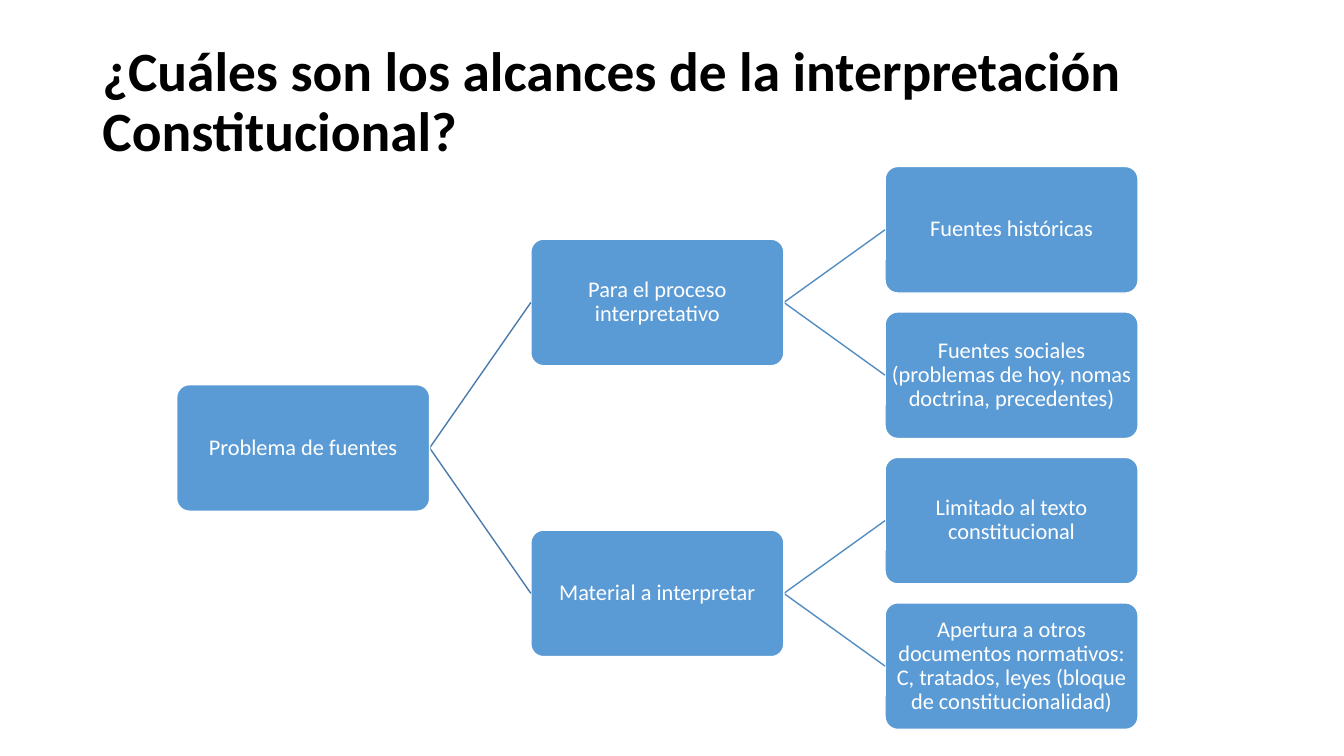
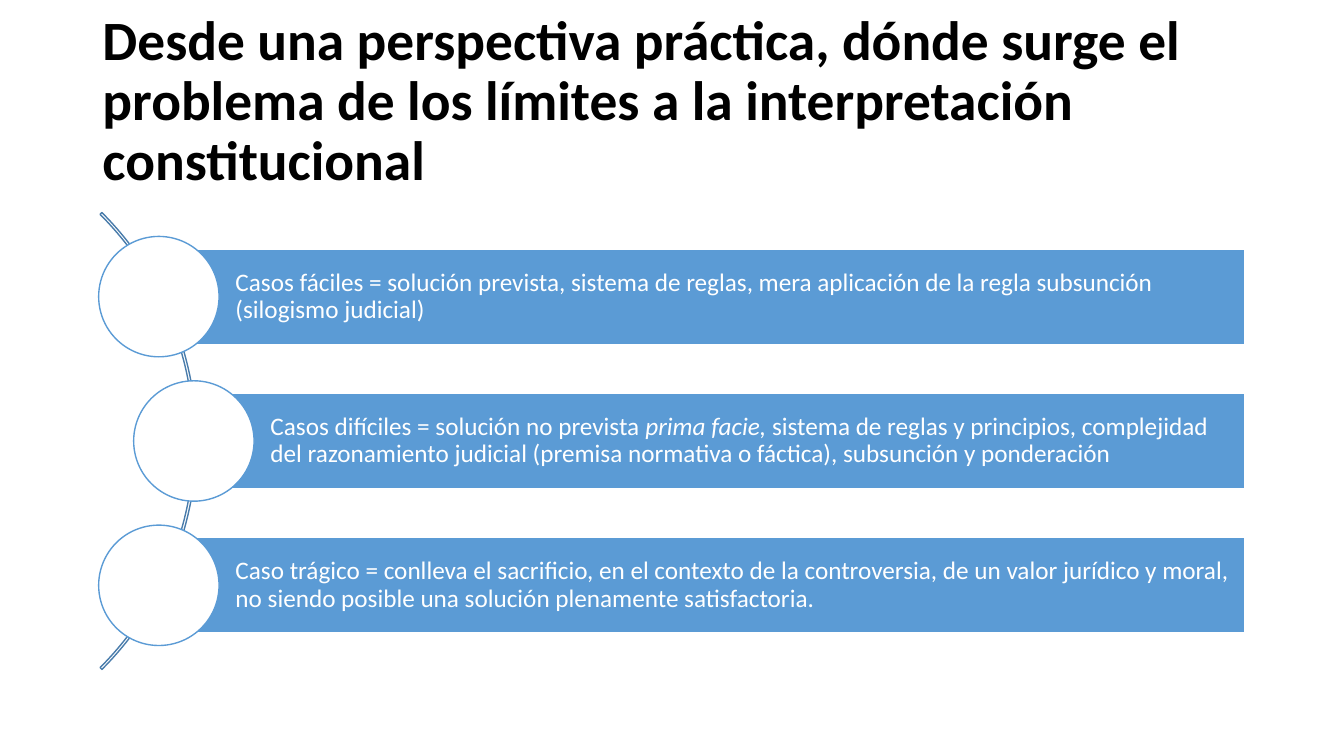
from dataclasses import dataclass

from lxml import etree
from pptx import Presentation
from pptx.dml.color import RGBColor
from pptx.enum.shapes import MSO_CONNECTOR, MSO_SHAPE
from pptx.enum.text import MSO_ANCHOR, MSO_AUTO_SIZE, PP_ALIGN
from pptx.oxml.ns import qn
from pptx.shapes.autoshape import Shape
from pptx.slide import Slide
from pptx.text.text import Font
from pptx.util import Pt

ROUNDED, RECTANGLE = MSO_SHAPE.ROUNDED_RECTANGLE, MSO_SHAPE.RECTANGLE
OVAL, BLOCK_ARC = MSO_SHAPE.OVAL, MSO_SHAPE.BLOCK_ARC
STRAIGHT = MSO_CONNECTOR.STRAIGHT
MIDDLE = MSO_ANCHOR.MIDDLE
LEFT, CENTER = PP_ALIGN.LEFT, PP_ALIGN.CENTER
NO_AUTOFIT = MSO_AUTO_SIZE.NONE
TITLE_ONLY = 5


@dataclass(frozen=True)
class Theme:
    font: str = "Calibri"
    title_size: float = 39.6
    node_size: float = 16
    case_size: float = 18
    line_width: float = 1
    line_spacing: float = 0.9
    black: RGBColor = RGBColor(0x00, 0x00, 0x00)
    white: RGBColor = RGBColor(0xFF, 0xFF, 0xFF)
    blue: RGBColor = RGBColor(0x5B, 0x9B, 0xD5)
    dark_blue: RGBColor = RGBColor(0x49, 0x7C, 0xAB)
    mid_blue: RGBColor = RGBColor(0x53, 0x8D, 0xC1)


THEME = Theme()


@dataclass(frozen=True)
class Box:
    left: float
    top: float
    width: float
    height: float


@dataclass(frozen=True)
class Node:
    text: str
    children: tuple["Node", ...] = ()


@dataclass(frozen=True)
class Span:
    text: str
    italic: bool = False


@dataclass(frozen=True)
class Case:
    center_x: float
    spans: tuple[Span, ...]


NODE_WIDTH, NODE_HEIGHT = 180.7, 90.4
TREE_LEFT, TREE_TOP = 126.2, 118.9
LEVEL_STEP, LEAF_STEP = 253, 103.9
LEVEL_LINES = (THEME.dark_blue, THEME.mid_blue)

SOURCES = Node("Problema de fuentes", (
    Node("Para el proceso interpretativo", (
        Node("Fuentes históricas"),
        Node("Fuentes sociales (problemas de hoy, nomas doctrina, precedentes)"),
    )),
    Node("Material a interpretar", (
        Node("Limitado al texto constitucional"),
        Node("Apertura a otros documentos normativos: C, tratados, leyes (bloque de constitucionalidad)"),
    )),
))

BAR_RIGHT, BAR_HEIGHT = 889.2, 68
CIRCLE_SIZE = 86
CASE_STEP, CASES_MIDDLE = 103.1, 315
ARC_LEFT, ARC_SIZE = -321.1, 461.5
ARC_ADJUSTMENTS = (189, 27, 0.004)
OUTER_X, INNER_X = 113.5, 138.5

CASES = (
    Case(OUTER_X, (
        Span("Casos fáciles = solución prevista, sistema de reglas, mera aplicación de la regla subsunción (silogismo judicial)"),
    )),
    Case(INNER_X, (
        Span("Casos difíciles = solución no prevista "),
        Span("prima facie, ", italic=True),
        Span("sistema de reglas y principios, complejidad del razonamiento judicial (premisa normativa o fáctica), subsunción y ponderación"),
    )),
    Case(OUTER_X, (
        Span("Caso trágico = conlleva el sacrificio, en el contexto de la controversia, de un valor jurídico y moral, no siendo posible una solución plenamente satisfactoria."),
    )),
)


def style_font(font: Font, size: float, color: RGBColor, bold: bool = False) -> None:
    font.name = THEME.font
    font.size = Pt(size)
    font.bold = bold
    font.color.rgb = color


def place(shape: Shape, box: Box) -> None:
    shape.left, shape.top = Pt(box.left), Pt(box.top)
    shape.width, shape.height = Pt(box.width), Pt(box.height)


def add_titled_slide(presentation: Presentation, text: str, box: Box) -> Slide:
    slide = presentation.slides.add_slide(presentation.slide_layouts[TITLE_ONLY])
    title = slide.shapes.title
    place(title, box)
    frame = title.text_frame
    frame.text = text
    frame.auto_size = NO_AUTOFIT
    frame.vertical_anchor = MIDDLE
    paragraph = frame.paragraphs[0]
    paragraph.alignment = LEFT
    paragraph.line_spacing = THEME.line_spacing
    style_font(paragraph.font, THEME.title_size, THEME.black, bold=True)
    return slide


def add_figure(slide: Slide, kind: MSO_SHAPE, box: Box, fill: RGBColor | None,
               line: RGBColor, adjustments: tuple[float, ...] = ()) -> Shape:
    shape = slide.shapes.add_shape(kind, 0, 0, 0, 0)
    place(shape, box)
    shape.shadow.inherit = False
    for index, value in enumerate(adjustments):
        shape.adjustments[index] = value
    if fill is None:
        shape.fill.background()
    else:
        shape.fill.solid()
        shape.fill.fore_color.rgb = fill
    shape.line.color.rgb = line
    shape.line.width = Pt(THEME.line_width)
    return shape


def write_text(shape: Shape, spans: tuple[Span, ...], size: float,
               alignment: PP_ALIGN, inset: float, left_inset: float) -> None:
    frame = shape.text_frame
    frame.word_wrap = True
    frame.vertical_anchor = MIDDLE
    frame.margin_left = Pt(left_inset)
    frame.margin_right = frame.margin_top = frame.margin_bottom = Pt(inset)
    paragraph = frame.paragraphs[0]
    paragraph.alignment = alignment
    paragraph.line_spacing = THEME.line_spacing
    style_font(paragraph.font, size, THEME.white)
    for span in spans:
        run = paragraph.add_run()
        run.text = span.text
        if span.italic:
            run.font.italic = True


def add_link(slide: Slide, start: tuple[float, float], end: tuple[float, float],
             color: RGBColor) -> None:
    connector = slide.shapes.add_connector(
        STRAIGHT, *(Pt(length) for length in (*start, *end)))
    connector.line.color.rgb = color
    connector.line.width = Pt(THEME.line_width)
    etree.SubElement(connector._element.spPr, qn("a:effectLst"))


def count_leaves(node: Node) -> int:
    return sum(map(count_leaves, node.children)) or 1


def draw_tree(slide: Slide, node: Node, level: int = 0, first_leaf: int = 0) -> float:
    left = TREE_LEFT + level * LEVEL_STEP
    child_middles = []
    leaf = first_leaf
    for child in node.children:
        child_middles.append(draw_tree(slide, child, level + 1, leaf))
        leaf += count_leaves(child)
    if child_middles:
        middle = sum(child_middles) / len(child_middles)
    else:
        middle = TREE_TOP + first_leaf * LEAF_STEP + NODE_HEIGHT / 2
    for child_middle in child_middles:
        add_link(slide, (left + NODE_WIDTH, middle),
                 (left + LEVEL_STEP, child_middle), LEVEL_LINES[level])
    box = Box(left, middle - NODE_HEIGHT / 2, NODE_WIDTH, NODE_HEIGHT)
    shape = add_figure(slide, ROUNDED, box, THEME.blue, THEME.white, (0.1,))
    write_text(shape, (Span(node.text),), THEME.node_size, CENTER, 0.7, 0.7)
    return middle


def draw_case(slide: Slide, case: Case, middle: float) -> None:
    bar_box = Box(case.center_x, middle - BAR_HEIGHT / 2,
                  BAR_RIGHT - case.center_x, BAR_HEIGHT)
    bar = add_figure(slide, RECTANGLE, bar_box, THEME.blue, THEME.white)
    write_text(bar, case.spans, THEME.case_size, LEFT, 3.6, 54.7)
    circle_box = Box(case.center_x - CIRCLE_SIZE / 2, middle - CIRCLE_SIZE / 2,
                     CIRCLE_SIZE, CIRCLE_SIZE)
    add_figure(slide, OVAL, circle_box, THEME.white, THEME.blue)


def build_sources_slide(presentation: Presentation) -> None:
    slide = add_titled_slide(
        presentation, "¿Cuáles son los alcances de la interpretación Constitucional?",
        Box(66, 28.8, 828, 90))
    draw_tree(slide, SOURCES)


def build_cases_slide(presentation: Presentation) -> None:
    slide = add_titled_slide(
        presentation,
        "Desde una perspectiva práctica, dónde surge el problema de los límites a la interpretación constitucional",
        Box(66, 13, 828, 120))
    arc_box = Box(ARC_LEFT, CASES_MIDDLE - ARC_SIZE / 2, ARC_SIZE, ARC_SIZE)
    add_figure(slide, BLOCK_ARC, arc_box, None, THEME.dark_blue, ARC_ADJUSTMENTS)
    for index, case in enumerate(CASES):
        offset = index - (len(CASES) - 1) / 2
        draw_case(slide, case, CASES_MIDDLE + offset * CASE_STEP)


def main() -> None:
    presentation = Presentation()
    presentation.slide_width, presentation.slide_height = Pt(960), Pt(540)
    build_sources_slide(presentation)
    build_cases_slide(presentation)
    presentation.save("out.pptx")


if __name__ == "__main__":
    main()
